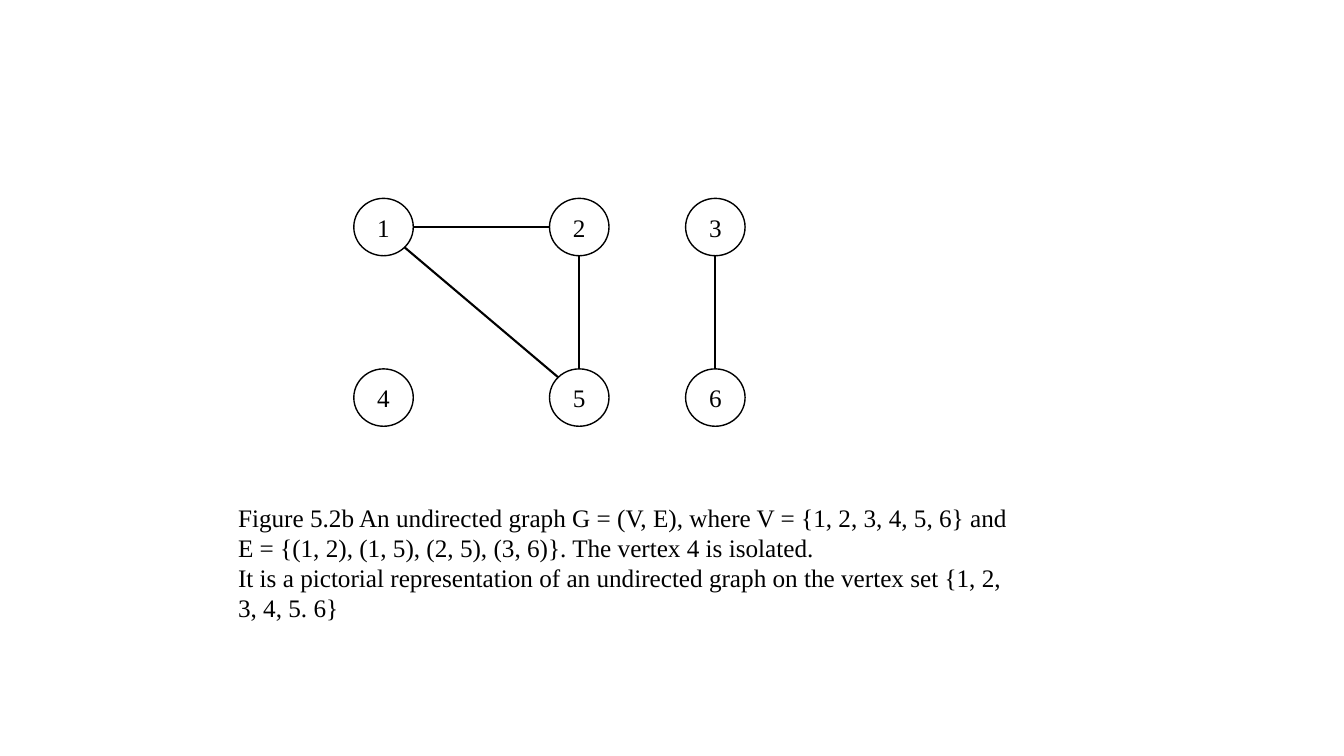
"""Build a slide showing an undirected graph with six vertices and its caption."""
from pptx import Presentation
from pptx.dml.color import RGBColor
from pptx.enum.shapes import MSO_CONNECTOR, MSO_SHAPE
from pptx.enum.text import MSO_ANCHOR, MSO_AUTO_SIZE, PP_ALIGN
from pptx.oxml.ns import qn
from pptx.util import Pt
from lxml.etree import SubElement


def rgb(color):
    return RGBColor.from_string(color)


def add_run(p, text):
    r = p.add_run()
    r.text = text
    r.font.name = "Times New Roman"
    r.font.size = Pt(18)
    r.font.color.rgb = rgb("000000")


prs = Presentation()
prs.slide_width, prs.slide_height = Pt(960), Pt(540)
s = prs.slides.add_slide(prs.slide_layouts[6])

W, H = 42.5, 41
vertices = {}
for row, y in enumerate((141.7, 263.5)):
    for col, x in enumerate((252.7, 392.5, 489.7)):
        n = row * 3 + col + 1
        vertices[n] = (x, y)
        sp = s.shapes.add_shape(MSO_SHAPE.OVAL, Pt(x), Pt(y), Pt(W), Pt(H))
        sp.shadow.inherit = False
        sp.fill.solid()
        sp.fill.fore_color.rgb = rgb("FFFFFF")
        sp.line.color.rgb = rgb("000000")
        sp.line.width = Pt(1)
        tf = sp.text_frame
        tf.margin_left = tf.margin_right = tf.margin_top = tf.margin_bottom = 0
        tf.vertical_anchor = MSO_ANCHOR.MIDDLE
        p = tf.paragraphs[0]
        p.alignment = PP_ALIGN.CENTER
        add_run(p, str(n))

TOP, BOTTOM, LEFT, RIGHT = (0.5, 0), (0.5, 1), (0, 0.5), (1, 0.5)
TOP_LEFT, BOTTOM_RIGHT = (0.15, 0.15), (0.85, 0.85)
edges = [
    (1, RIGHT, 2, LEFT),
    (1, BOTTOM_RIGHT, 5, TOP_LEFT),
    (2, BOTTOM, 5, TOP),
    (3, BOTTOM, 6, TOP),
]
for start, start_site, end, end_site in edges:
    ends = []
    for n, (fx, fy) in ((start, start_site), (end, end_site)):
        x, y = vertices[n]
        ends += [Pt(x + fx * W), Pt(y + fy * H)]
    line = s.shapes.add_connector(MSO_CONNECTOR.STRAIGHT, *ends)
    line.line.color.rgb = rgb("000000")
    line.line.width = Pt(1.5)
    SubElement(line._element.spPr, qn("a:effectLst"))

caption = [
    "Figure 5.2b An undirected graph G = (V, E), where V = {1, 2, 3, 4, 5, 6} and "
    "E = {(1, 2), (1, 5), (2, 5), (3, 6)}. The vertex 4 is isolated.",
    "It is a pictorial representation of an undirected graph on the vertex set "
    "{1, 2, 3, 4, 5. 6}",
]
tf = s.shapes.add_textbox(Pt(163), Pt(355), Pt(568), Pt(94)).text_frame
tf.word_wrap = True
tf.auto_size = MSO_AUTO_SIZE.SHAPE_TO_FIT_TEXT
for i, text in enumerate(caption):
    p = tf.add_paragraph() if i else tf.paragraphs[0]
    add_run(p, text)

prs.save("out.pptx")
